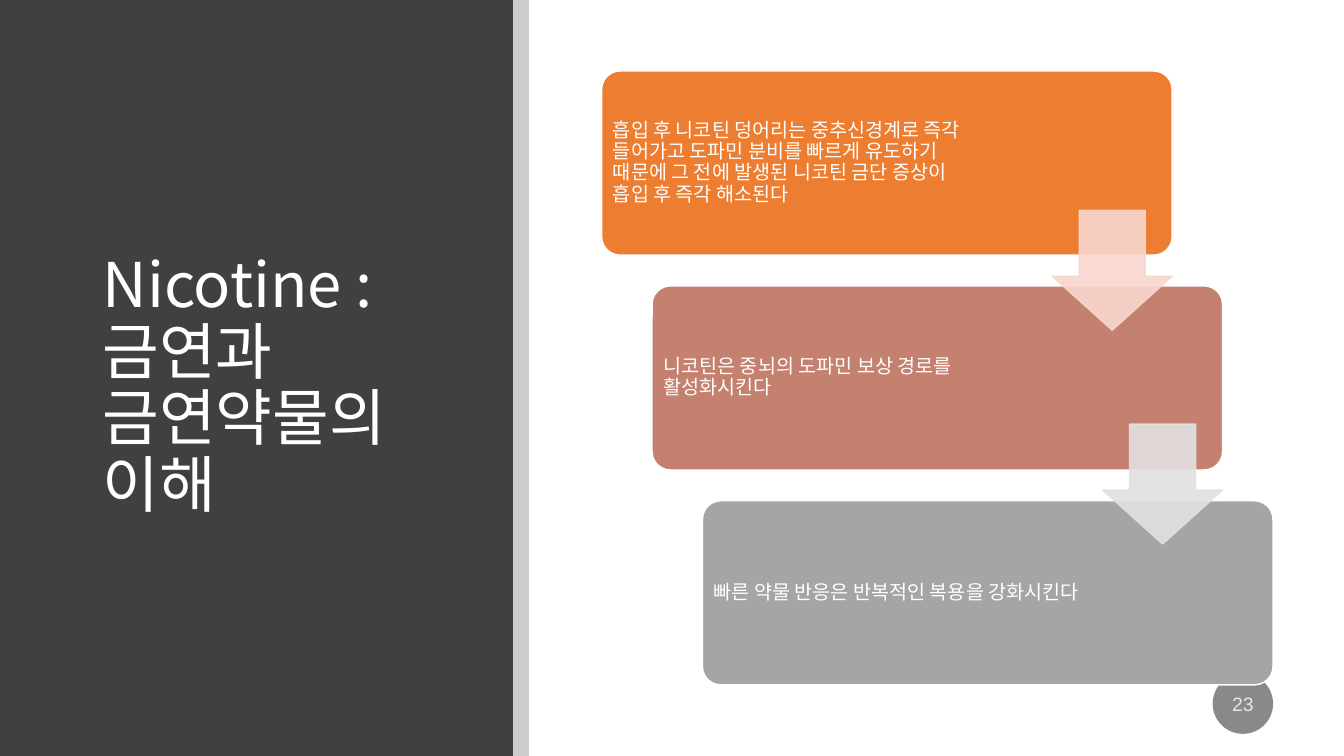
from pptx import Presentation
from pptx import util as u
from pptx.dml import color
from pptx.enum import shapes, text
from pptx.oxml import ns, xmlchemy

Pt = u.Pt
Kind = shapes.MSO_SHAPE

HUES = {
    "panel": "404040", "stripe": "000000", "badge": "898989", "white": "FFFFFF",
    "orange": "ED7D31", "rose": "C48170", "gray": "A5A5A5",
    "pink": "F8D7CE", "pale": "E1E1E1",
}
SANS = "Noto Sans CJK KR"

# Card text, text width, card colour, colour of the arrow that follows
STEPS = [
    ("흡입 후 니코틴 덩어리는 중추신경계로 즉각 들어가고 도파민 분비를 빠르게 유도하기 "
     "때문에 그 전에 발생된 니코틴 금단 증상이 흡입 후 즉각 해소된다", 265.7, "orange", "pink"),
    ("니코틴은 중뇌의 도파민 보상 경로를 활성화시킨다", 278.6, "rose", "pale"),
    ("빠른 약물 반응은 반복적인 복용을 강화시킨다", 278.6, "gray", None),
]


def hue(name):
    return color.RGBColor.from_string(HUES[name])


def fade(node, share):
    """Give every colour inside the node an opacity in percent."""
    for tint in node.iter(ns.qn("a:srgbClr")):
        alpha = xmlchemy.OxmlElement("a:alpha")
        alpha.set("val", str(share * 1000))
        tint.append(alpha)


def draw(slide, kind, box, fill, line=None, share=100, adj=()):
    item = slide.shapes.add_shape(kind, *map(Pt, box))
    item.shadow.inherit = False
    item.fill.solid()
    item.fill.fore_color.rgb = hue(fill)
    if line:
        item.line.color.rgb = hue(line)
        item.line.width = Pt(1)
    else:
        item.line.fill.background()
    for i, part in enumerate(adj):
        item.adjustments[i] = part
    if share < 100:
        fade(item.element.spPr, share)
    return item


def write(item, words, size, font=SANS, align=text.PP_ALIGN.LEFT,
          inset=None, lead=None, after=0, share=100):
    frame = item.text_frame
    frame.word_wrap = True
    frame.vertical_anchor = text.MSO_ANCHOR.MIDDLE
    if inset is not None:
        frame.margin_left = frame.margin_right = Pt(inset)
        frame.margin_top = frame.margin_bottom = Pt(inset)
    para = frame.paragraphs[0]
    para.alignment = align
    para.space_after = Pt(after)
    if lead:
        para.line_spacing = lead
    run = para.add_run()
    run.text = words
    run.font.size = Pt(size)
    run.font.color.rgb = hue("white")
    run.font.name = font
    east = xmlchemy.OxmlElement("a:ea")
    east.set("typeface", font)
    run.font.element.append(east) if hasattr(run.font, "element") else \
        para.runs[0]._r.get_or_add_rPr().append(east)
    if share < 100:
        fade(item.element.txBody, share)


def panel(slide, x, y, w, h):
    """Dark title side with its stripe."""
    stripe = 11.4
    draw(slide, Kind.RECTANGLE, (x, y, w - stripe, h), "panel")
    title = slide.shapes.add_textbox(Pt(x + 66.2), Pt(y + 64.1), Pt(262.8), Pt(425.5))
    write(title, "Nicotine : 금연과 금연약물의 이해", 44, lead=0.9)
    draw(slide, Kind.RECTANGLE, (x + w - stripe, y, stripe, h), "stripe", share=20)


def badge(slide, x, y, size):
    """Round page number."""
    disc = draw(slide, Kind.OVAL, (x, y, size, size), "badge")
    write(disc, "23", 13.9, font="Arial", align=text.PP_ALIGN.CENTER, after=6, share=80)


def stairs(slide, x, y, w, h):
    """Cards stepping down to the right, then the arrows between them."""
    last = len(STEPS) - 1
    shift, wide, high, pad, side = 36, w - 36 * last, 131.5, 3.85, 85.7
    pitch = (h - high) / last
    for i, (words, span, fill, _) in enumerate(STEPS):
        left, top = x + i * shift, y + i * pitch
        draw(slide, Kind.ROUNDED_RECTANGLE, (left, top, wide, high), fill, "white", adj=[0.1])
        label = slide.shapes.add_textbox(
            Pt(left + pad), Pt(top + pad), Pt(span), Pt(high - 2 * pad))
        write(label, words, 14, inset=4.2, lead=0.9, after=4.9)
    for i, (_, _, _, tint) in enumerate(STEPS[:last]):
        spot = (x + i * shift + wide - side, y + 99.5 + i * (pitch - 0.8), side, side)
        draw(slide, Kind.DOWN_ARROW, spot, tint, tint, share=90, adj=[0.55, 0.45])


def main():
    deck = Presentation()
    deck.slide_width, deck.slide_height = Pt(960), Pt(540)
    slide = deck.slides.add_slide(deck.slide_layouts[6])
    panel(slide, 0, 0, 377.8, 540)
    badge(slide, 866.2, 481, 43.2)
    stairs(slide, 429.8, 50.7, 479.5, 438.5)
    deck.save("out.pptx")


if __name__ == "__main__":
    main()
